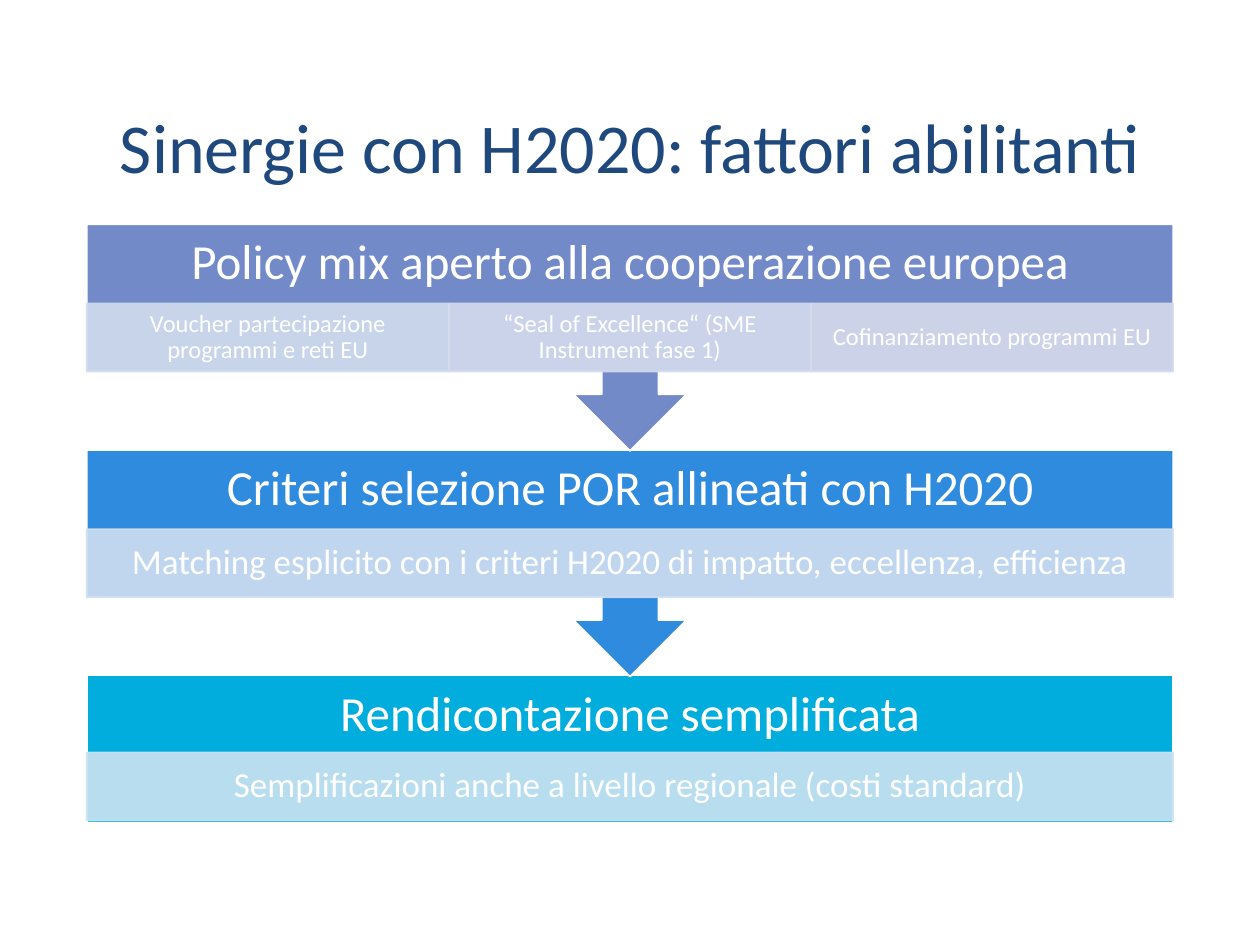
from dataclasses import dataclass

from lxml.etree import SubElement
from pptx import Presentation
from pptx.dml.color import RGBColor
from pptx.enum.shapes import MSO_SHAPE as SHAPE
from pptx.enum.text import MSO_ANCHOR as ANCHOR, PP_ALIGN as ALIGN
from pptx.oxml.ns import qn
from pptx.util import Cm, Pt


@dataclass(frozen=True)
class Theme:
    font: str = "Calibri"
    title: str = "1F497D"
    white: str = "FFFFFF"
    title_size: int = 40
    head_size: int = 28
    detail_size: int = 20
    small_size: int = 14
    detail_alpha: int = 90


theme = Theme()


def add_block(shape, x, y, w, h, fill, line, alpha=100):
    sp = s.shapes.add_shape(shape, Cm(x), Cm(y), Cm(w), Cm(h))
    sp.shadow.inherit = False
    sp.fill.solid()
    sp.fill.fore_color.rgb = RGBColor.from_string(fill)
    sp.line.color.rgb = RGBColor.from_string(line)
    sp.line.width = Pt(1)
    if alpha < 100:
        for clr in sp._element.spPr.iter(qn("a:srgbClr")):
            SubElement(clr, qn("a:alpha"), val=str(alpha * 1000))
    return sp


def set_text(sp, text, size, color, margin_x, margin_y, spacing=0.9):
    tf = sp.text_frame
    tf.word_wrap = True
    tf.vertical_anchor = ANCHOR.MIDDLE
    tf.margin_left = tf.margin_right = Cm(margin_x)
    tf.margin_top = tf.margin_bottom = Cm(margin_y)
    p = tf.paragraphs[0]
    p.text = text
    p.alignment = ALIGN.CENTER
    p.line_spacing = spacing
    p.font.name = theme.font
    p.font.size = Pt(size)
    p.font.color.rgb = RGBColor.from_string(color)


prs = Presentation()
prs.slide_width, prs.slide_height = Cm(25.4), Cm(19.05)
s = prs.slides.add_slide(prs.slide_layouts[6])

left, width = 1.75, 21.9
top, step = 4.52, 4.55
callout_h, last_h, head_h, detail_h = 4.57, 2.97, 1.6, 1.37

title = s.shapes.add_textbox(Cm(left), Cm(2.34), Cm(width), Cm(1.2))
set_text(title, "Sinergie con H2020: fattori abilitanti",
         theme.title_size, theme.title, 0.25, 0.13, 1.0)

stages = [
    ("Policy mix aperto alla cooperazione europea", "738AC8", [
        ("Voucher partecipazione programmi e reti EU", "D1DDEE"),
        ("“Seal of Excellence“ (SME Instrument fase 1)", "D4DBED"),
        ("Cofinanziamento programmi EU", "D6DAEB"),
    ]),
    ("Criteri selezione POR allineati con H2020", "2F8BDD", [
        ("Matching esplicito con i criteri H2020 di impatto, eccellenza, efficienza", "CFDFF0"),
    ]),
    ("Rendicontazione semplificata", "00ADDC", [
        ("Semplificazioni anche a livello regionale (costi standard)", "CCE3F2"),
    ]),
]

for i, (heading, color, details) in reversed(list(enumerate(stages))):
    y = top + i * step
    if i == len(stages) - 1:
        add_block(SHAPE.RECTANGLE, left, y, width, last_h, color, theme.white)
        detail_y = y + 1.55
    else:
        callout = add_block(SHAPE.UP_ARROW_CALLOUT, left, y, width, callout_h, color, theme.white)
        callout.rotation = 180
        detail_y = y + head_h

    head = s.shapes.add_textbox(Cm(left), Cm(y), Cm(width), Cm(head_h))
    set_text(head, heading, theme.head_size, theme.white, 0.56, 0.56)

    detail_w = width / len(details)
    size, margin_x, margin_y = (
        (theme.small_size, 0.28, 0.05) if len(details) > 1 else (theme.detail_size, 0.41, 0.08)
    )
    for j, (text, tint) in enumerate(details):
        detail = add_block(SHAPE.RECTANGLE, left + j * detail_w, detail_y, detail_w, detail_h,
                           tint, tint, theme.detail_alpha)
        set_text(detail, text, size, theme.white, margin_x, margin_y)

prs.save("out.pptx")
